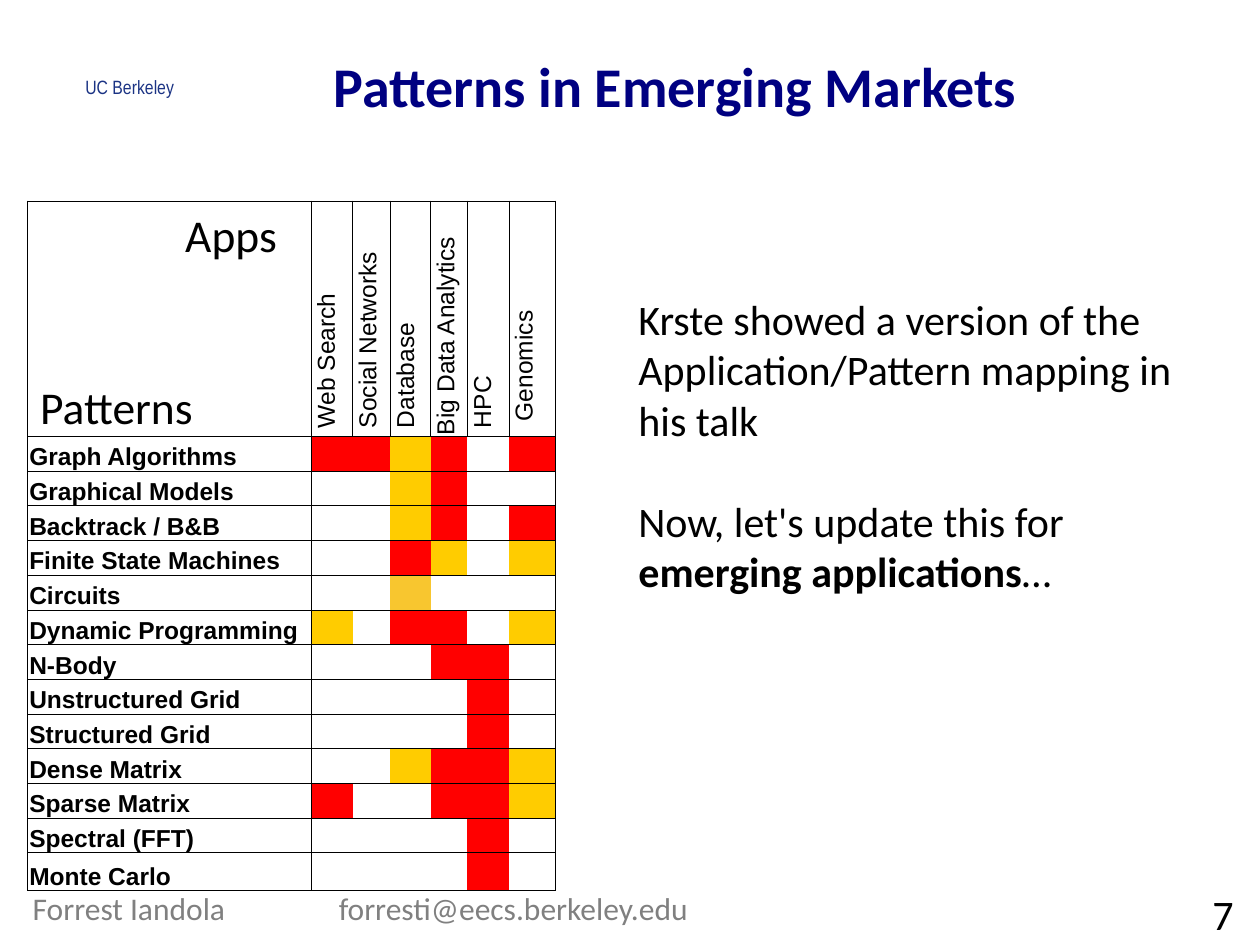
from lxml import etree
from pptx import Presentation
from pptx import util as u
from pptx.dml.color import RGBColor
from pptx.enum import text as t
from pptx.oxml import ns

Cm, Pt = u.Cm, u.Pt
HUES = {
    "black": "000000", "white": "FFFFFF", "navy": "000081",
    "blue": "1B3384", "gray": "808080",
    "R": "FF0000", "Y": "FFCC00", "A": "F8C62F", "-": "FFFFFF",
}
# Name and count of space widths that set it off from the cell's edge
APPS = [("Web Search", 1), ("Social Networks", 1), ("Database", 1),
        ("Big Data Analytics", 0), ("HPC", 1), ("Genomics", 2)]
# One mark per app: R red, Y yellow, A amber, - none
PATTERNS = [
    ("Graph Algorithms", "RRYR-R"),
    ("Graphical Models", "--YR--"),
    ("Backtrack / B&B", "--YR-R"),
    ("Finite State Machines", "--RY-Y"),
    ("Circuits", "--A---"),
    ("Dynamic Programming", "Y-RR-Y"),
    ("N-Body", "---RR-"),
    ("Unstructured Grid", "----R-"),
    ("Structured Grid", "----R-"),
    ("Dense Matrix", "--YRRY"),
    ("Sparse Matrix", "R--RRY"),
    ("Spectral (FFT)", "----R-"),
    ("Monte Carlo", "----R-"),
]
WIDTHS = [5.71, 0.84, 0.76, 0.81, 0.74, 0.84, 0.94]
HEAD, ROW, LAST = 4.75, 0.7, 0.76
SPACE = 0.14


def tint(hue):
    return RGBColor.from_string(HUES[hue])


def style(para, size, hue="black", face="Calibri", bold=None, align=None):
    font = para.font
    font.name, font.size, font.bold = face, Pt(size), bold
    font.color.rgb = tint(hue)
    if align is not None:
        para.alignment = align


def place(shape, left, top, width, height):
    shape.left, shape.top = Cm(left), Cm(top)
    shape.width, shape.height = Cm(width), Cm(height)


def label(slide, box, words, size, wrap=True, **look):
    frame = slide.shapes.add_textbox(*map(Cm, box)).text_frame
    frame.word_wrap = wrap
    para = frame.paragraphs[0]
    para.text = words
    style(para, size, **look)
    return para


def indent(para, left):
    props = para._p.get_or_add_pPr()
    props.set("marL", str(Cm(left)))
    props.set("indent", "0")
    return props


def edge(cell, sides):
    """Draw thin lines on the given sides and none on the others."""
    props = cell._tc.get_or_add_tcPr()
    for side in "LRTB":
        line = etree.SubElement(props, ns.qn("a:ln" + side), w=str(Pt(0.5)))
        if side in sides:
            fill = etree.SubElement(line, ns.qn("a:solidFill"))
            etree.SubElement(fill, ns.qn("a:srgbClr"), val=HUES["black"])
        else:
            etree.SubElement(line, ns.qn("a:noFill"))


def fill_cell(cell, words="", sides="LRTB", hue="white", bold=False):
    edge(cell, sides)
    cell.fill.solid()
    cell.fill.fore_color.rgb = tint(hue)
    cell.margin_left = cell.margin_right = cell.margin_top = Cm(0.03)
    cell.margin_bottom = 0
    cell.vertical_anchor = t.MSO_ANCHOR.BOTTOM
    para = cell.text_frame.paragraphs[0]
    if words:
        para.text = words
    else:
        # Keeps an empty cell from growing its row
        etree.SubElement(para._p, ns.qn("a:endParaRPr"), sz="1400")
    style(para, 14, face="Arial", bold=bold)
    return para


def add_grid(slide):
    high = [HEAD] + [ROW] * (len(PATTERNS) - 1) + [LAST]
    frame = slide.shapes.add_table(
        len(high), len(WIDTHS), Cm(0.56), Cm(4.05),
        Cm(sum(WIDTHS)), Cm(sum(high)))
    grid = frame.table
    grid.first_row = grid.horz_banding = False
    for col, width in zip(grid.columns, WIDTHS):
        col.width = Cm(width)
    for row, height in zip(grid.rows, high):
        row.height = Cm(height)

    fill_cell(grid.cell(0, 0))
    for c, (name, gap) in enumerate(APPS, 1):
        cell = grid.cell(0, c)
        indent(fill_cell(cell, name), gap * SPACE)
        cell._tc.tcPr.set("vert", "vert270")
    for r, (name, marks) in enumerate(PATTERNS, 1):
        fill_cell(grid.cell(r, 0), name, bold=True)
        for c, mark in enumerate(marks, 1):
            sides = "TB" + {1: "L", len(marks): "R"}.get(c, "")
            fill_cell(grid.cell(r, c), sides=sides, hue=mark)
    return frame


def add_title(slide):
    title = slide.shapes.title
    place(title, 3.73, 0.15, 19.76, 3.15)
    frame = title.text_frame
    frame.text = "Patterns in Emerging Markets"
    frame.auto_size = t.MSO_AUTO_SIZE.NONE
    frame.vertical_anchor = t.MSO_ANCHOR.MIDDLE
    style(frame.paragraphs[0], 32, "navy", bold=True,
          align=t.PP_ALIGN.CENTER)


def add_apps(slide, grid):
    """Set the body placeholder over the corner cell of the grid."""
    body = slide.placeholders[1]
    place(body, 3.48, 4.05, 2.39, 1.88)
    frame = body.text_frame
    frame.text = "Apps"
    frame.auto_size = t.MSO_AUTO_SIZE.NONE
    para = frame.paragraphs[0]
    etree.SubElement(indent(para, 0), ns.qn("a:buNone"))
    para.space_before = 0
    style(para, 26)
    body.element.addprevious(grid.element)


def add_foot(slide):
    para = label(slide, (0.41, 17.8, 16.59, 1.02),
                 "Forrest Iandola\tforresti@eecs.berkeley.edu", 18,
                 hue="gray")
    tabs = etree.Element(ns.qn("a:tabLst"))
    etree.SubElement(tabs, ns.qn("a:tab"), pos=str(Cm(6.17)), algn="l")
    para._p.pPr.insert(0, tabs)


def add_note(slide):
    first = label(
        slide, (12.62, 5.79, 12.22, 10.26),
        "Krste showed a version of the Application/Pattern mapping "
        "in his talk", 24)
    frame = first._parent
    para = frame.add_paragraph()
    para.space_before = Pt(29)
    style(para, 24)
    for words, bold in [("Now, let's update this for ", None),
                        ("emerging applications", True), ("…", None)]:
        run = para.add_run()
        run.text, run.font.bold = words, bold


def main():
    deck = Presentation()
    deck.slide_width, deck.slide_height = Cm(25.4), Cm(19.05)
    slide = deck.slides.add_slide(deck.slide_layouts[1])
    label(slide, (1.47, 1.4, 2.34, 0.74), "UC Berkeley", 11, wrap=False,
          hue="blue", face="Arial Narrow")
    label(slide, (21.41, 17.78, 3.71, 1.27), "7", 24,
          align=t.PP_ALIGN.RIGHT)
    add_title(slide)
    add_apps(slide, add_grid(slide))
    label(slide, (0.56, 7.52, 3.73, 1.04), "Patterns", 26)
    add_foot(slide)
    add_note(slide)
    deck.save("out.pptx")


if __name__ == "__main__":
    main()
